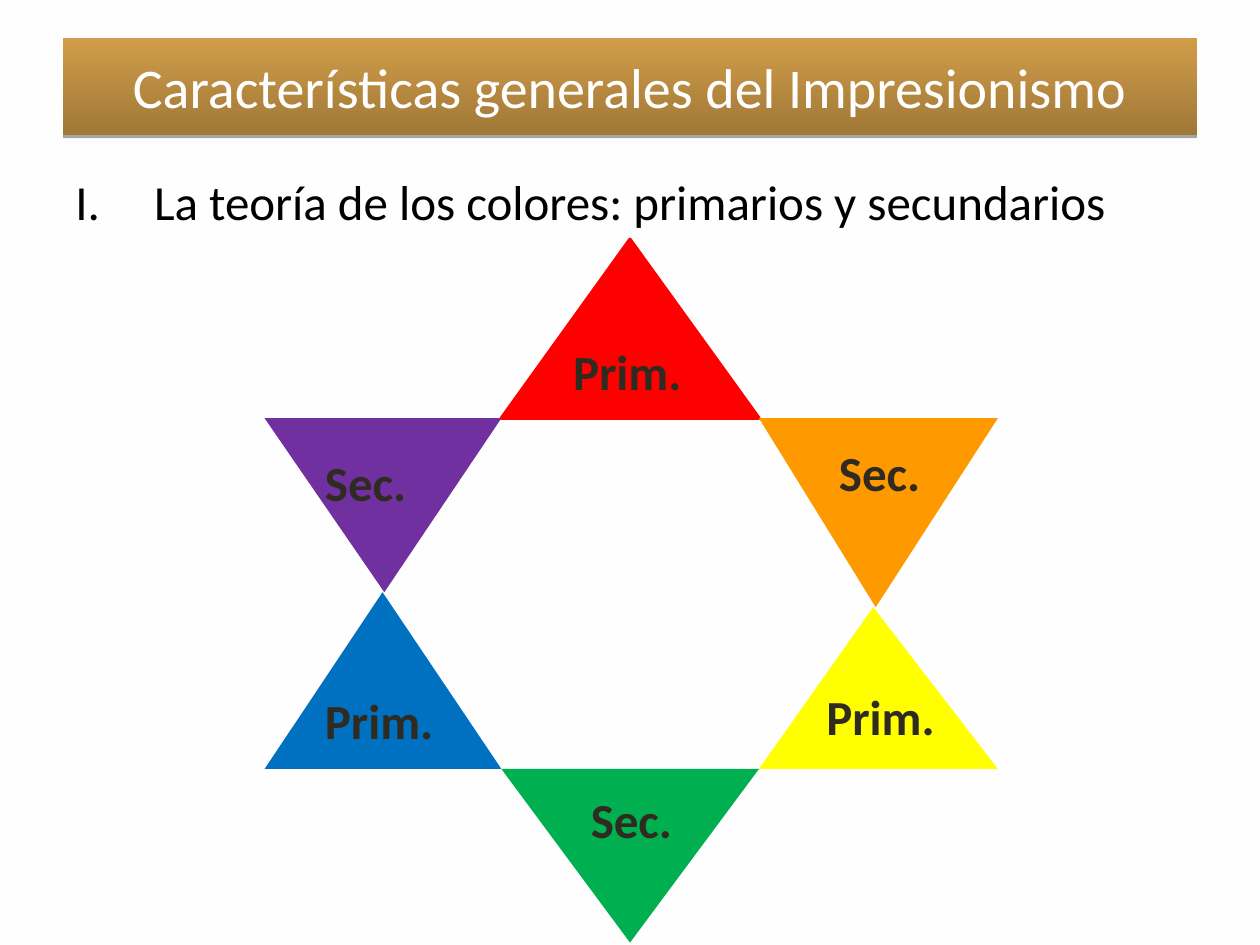
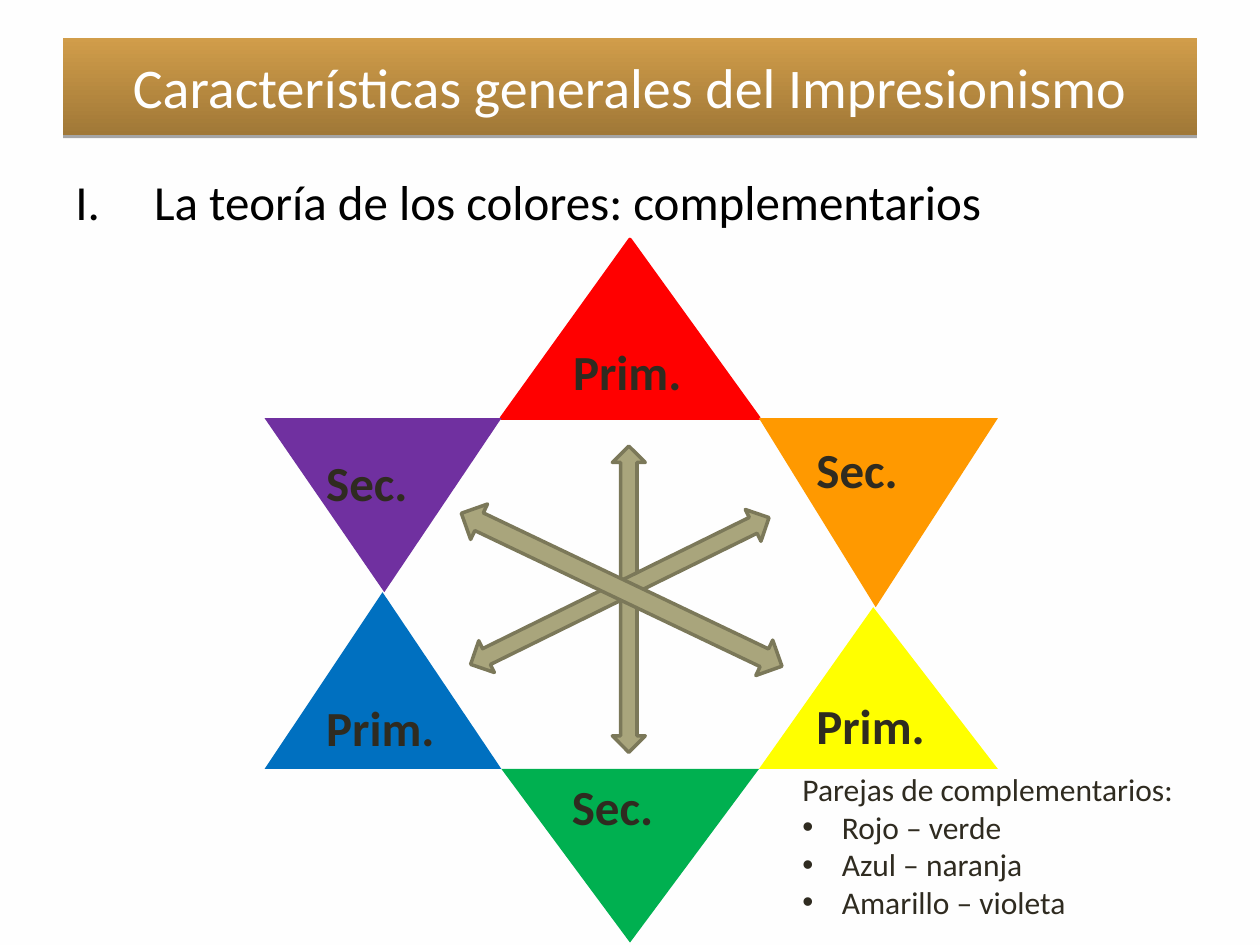
from lxml import etree
from pptx import Presentation
from pptx import util as u
from pptx.dml.color import RGBColor
from pptx.enum import text as t
from pptx.oxml import ns

FONT = "Calibri"
INK = "2F2B20"
BAND_TOP, BAND_BOTTOM = "D19D4A", "A07837"
ARROW_FILL, ARROW_LINE = "A9A57C", "7B7859"

TITLE = "Características generales del Impresionismo"
PAIRS_HEADING = "Parejas de complementarios:"
PAIRS = ["Rojo – verde", "Azul – naranja", "Amarillo – violeta"]

# Edges of the colour star
X1, X2, X3, X4 = 151.2, 286.5, 433.7, 570.2
TOP, UPPER, LOWER, BOTTOM = 136.8, 239, 439.4, 538.6
LEFT_MEET, RIGHT_MEET = 338.4, 347

# colour, left, right, base y, apex x, apex y, outline colour
TRIANGLES = [
    ("FF0000", X2, X3, UPPER, 360, TOP, "FF0000"),
    ("7030A0", X1, X2, UPPER, 219.6, LEFT_MEET, None),
    ("00B050", X2, X3, LOWER, 360, BOTTOM, None),
    ("FF9900", X3, X4, UPPER, 500.4, RIGHT_MEET, None),
    ("FFFF00", X3, X4, LOWER, 499, RIGHT_MEET, None),
    ("0070C0", X1, X2, LOWER, 218.6, LEFT_MEET, None),
]

# centre x, centre y, width, length, clockwise rotation
ARROWS = [
    (359.3, 342.4, 18.8, 175, 0),
    (354.2, 337.7, 20.2, 190, 63.8),
    (355.2, 337, 22.4, 203, 115.5),
]

SLIDES = [
    {
        "topic": "La teoría de los colores: primarios y secundarios",
        "labels": [("Prim.", 320.4, 191.5), ("Sec.", 178.6, 254.9), ("Sec.", 472.3, 249.1),
                   ("Sec.", 330.5, 447.8), ("Prim.", 178.6, 391), ("Prim.", 465.1, 388.8)],
        "complementary": False,
    },
    {
        "topic": "La teoría de los colores: complementarios",
        "labels": [("Prim.", 320.4, 191.5), ("Sec.", 179.3, 254.9), ("Sec.", 459.4, 247.7),
                   ("Sec.", 319.7, 439.9), ("Prim.", 179.3, 395.3), ("Prim.", 459.4, 393.8)],
        "complementary": True,
    },
]


def color(value):
    return RGBColor.from_string(value)


def write(paragraph, content, size=28, ink=INK, bold=False, align=None, before=None):
    paragraph.alignment = align
    if before is not None:
        paragraph.space_before = u.Pt(before)
    run = paragraph.add_run()
    run.text = content
    run.font.name, run.font.size, run.font.bold = FONT, u.Pt(size), bold
    run.font.color.rgb = color(ink)


def add_text_box(slide, left, top, width, height):
    frame = slide.shapes.add_textbox(*map(u.Pt, (left, top, width, height))).text_frame
    frame.word_wrap = True
    return frame


def add_marker(paragraph, indent, tag, **attributes):
    """Give the paragraph a hanging indent and a bullet or number."""
    properties = paragraph._p.get_or_add_pPr()
    properties.set("marL", str(u.Pt(indent)))
    properties.set("indent", str(-u.Pt(indent)))
    if tag == "a:buChar":
        etree.SubElement(properties, ns.qn("a:buFont"), typeface="Arial")
    etree.SubElement(properties, ns.qn(tag), **attributes)


def add_title(slide):
    title = slide.shapes.title
    title.left, title.top, title.width, title.height = map(u.Pt, (36, 21.6, 648, 55.6))
    title.fill.gradient()
    title.fill.gradient_angle = 90
    for stop, value in zip(title.fill.gradient_stops, (BAND_BOTTOM, BAND_TOP)):
        stop.color.rgb = color(value)
    effects = etree.SubElement(title._element.spPr, ns.qn("a:effectLst"))
    shadow = etree.SubElement(effects, ns.qn("a:outerShdw"), blurRad="0",
                              dist=str(u.Pt(1.8)), dir="5400000", rotWithShape="0")
    shade = etree.SubElement(shadow, ns.qn("a:srgbClr"), val="000000")
    etree.SubElement(shade, ns.qn("a:alpha"), val="35000")
    frame = title.text_frame
    frame.auto_size = t.MSO_AUTO_SIZE.NONE
    frame.vertical_anchor = t.MSO_ANCHOR.MIDDLE
    write(frame.paragraphs[0], TITLE, size=32, ink="FFFFFF", align=t.PP_ALIGN.CENTER)


def add_outline(slide, points, fill, line=None, rotation=0):
    start, *others = [(u.Pt(x), u.Pt(y)) for x, y in points]
    builder = slide.shapes.build_freeform(*start)
    builder.add_line_segments(others, close=True)
    shape = builder.convert_to_shape()
    shape.rotation = rotation
    shape.shadow.inherit = False
    shape.fill.solid()
    shape.fill.fore_color.rgb = color(fill)
    if line:
        shape.line.color.rgb = color(line)
        shape.line.width = u.Pt(2)
    else:
        shape.line.fill.background()


def add_triangle(slide, fill, left, right, base, apex_x, apex_y, line):
    """Draw the triangle upright; one that points down is turned by 180 degrees."""
    points_down = apex_y > base
    if points_down:
        apex_x, apex_y, base = left + right - apex_x, base, apex_y
    add_outline(slide, [(left, base), (apex_x, apex_y), (right, base)], fill, line,
                180 if points_down else 0)


def add_double_arrow(slide, x, y, width, length, rotation):
    half, shaft, tip = width / 2, width / 4, length / 2
    neck = tip - half
    right_side = [(0, -tip), (half, -neck), (shaft, -neck),
                  (shaft, neck), (half, neck), (0, tip)]
    left_side = [(-dx, dy) for dx, dy in right_side[-2:0:-1]]
    add_outline(slide, [(x + dx, y + dy) for dx, dy in right_side + left_side],
                ARROW_FILL, ARROW_LINE, rotation)


def add_pairs(slide):
    frame = add_text_box(slide, 451.5, 436.3, 268.5, 94.3)
    write(frame.paragraphs[0], PAIRS_HEADING, size=18)
    for pair in PAIRS:
        paragraph = frame.add_paragraph()
        write(paragraph, pair, size=18)
        add_marker(paragraph, 22.5, "a:buChar", char="•")


def build_slide(presentation, content):
    slide = presentation.slides.add_slide(presentation.slide_layouts.get_by_name("Title Only"))
    add_title(slide)
    topic = add_text_box(slide, 36, 94.5, 648, 388).paragraphs[0]
    write(topic, content["topic"], ink="000000", before=8)
    add_marker(topic, 45, "a:buAutoNum", type="romanUcPeriod")
    for triangle in TRIANGLES:
        add_triangle(slide, *triangle)
    if content["complementary"]:
        for arrow in ARROWS:
            add_double_arrow(slide, *arrow)
        add_pairs(slide)
    for label, left, top in content["labels"]:
        write(add_text_box(slide, left, top, 85, 41).paragraphs[0], label, bold=True)


def main():
    presentation = Presentation()
    presentation.slide_width, presentation.slide_height = u.Pt(720), u.Pt(540)
    background = presentation.slide_master.background.fill
    background.solid()
    background.fore_color.rgb = color("FEFEFE")
    for content in SLIDES:
        build_slide(presentation, content)
    presentation.save("out.pptx")


if __name__ == "__main__":
    main()
